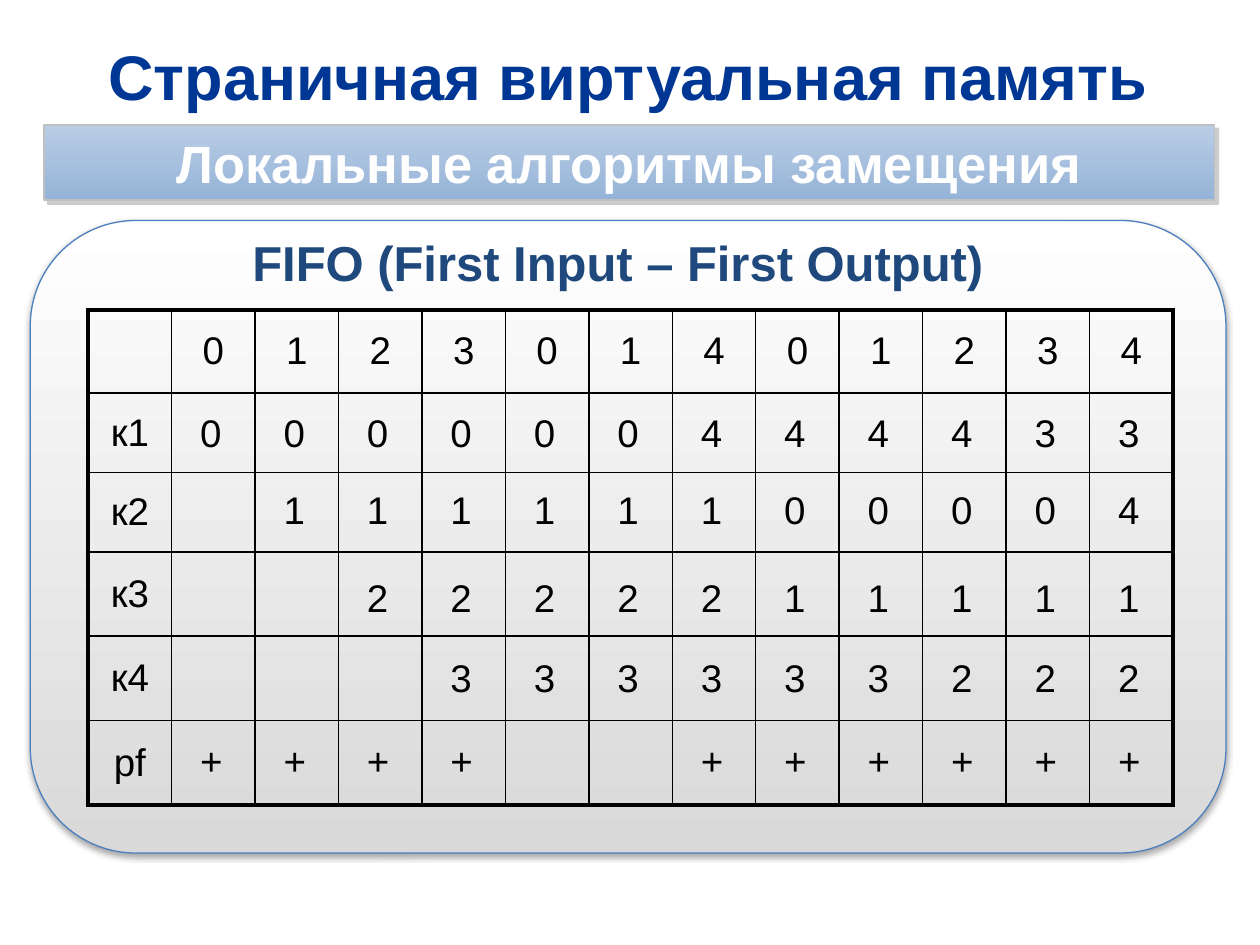
from lxml.etree import SubElement
from pptx import Presentation
from pptx.dml.color import RGBColor
from pptx.enum.shapes import MSO_SHAPE
from pptx.enum.text import MSO_ANCHOR, PP_ALIGN
from pptx.oxml import parse_xml
from pptx.oxml.ns import nsdecls, qn
from pptx.util import Inches, Pt

BLACK = RGBColor(0x00, 0x00, 0x00)
WHITE = RGBColor(0xFF, 0xFF, 0xFF)
TITLE_BLUE = RGBColor(0x00, 0x37, 0x94)
HEADING_BLUE = RGBColor(0x1F, 0x49, 0x7D)
BANNER_TOP = RGBColor(0xB9, 0xCD, 0xE5)
BANNER_BOTTOM = RGBColor(0x95, 0xB3, 0xD7)
BANNER_LINE = RGBColor(0xC0, 0xC0, 0xC0)
BANNER_SHADOW = RGBColor(0x80, 0x80, 0x80)
PANEL_BOTTOM = RGBColor(0xD9, 0xD9, 0xD9)
PANEL_LINE = RGBColor(0x4B, 0x7E, 0xBC)

COLUMN = 0.6623
ROW_HEIGHTS = [0.66, 0.63, 0.63, 0.67, 0.67, 0.67]
TABLE_LEFT, TABLE_TOP = 0.7, 2.46
REQUESTS = "012301401234"
ROW_LABELS = ["к1", "к2", "к3", "к4", "pf"]
FRAME_ROWS = [
    (3.2, "000000444433"),
    (3.81, " 11111100004"),
    (4.51, "  2222211111"),
    (5.14, "   333333222"),
    (5.8, "++++  ++++++"),
]


def write(frame, text, size, color, bold=False, align=PP_ALIGN.CENTER):
    frame.word_wrap = True
    para = frame.paragraphs[0]
    para.text = text
    para.alignment = align
    para.font.name = "Arial"
    para.font.size = Pt(size)
    para.font.bold = bold
    para.font.color.rgb = color


def add_panel(kind, left, top, width, height, colors, line, line_width, shadow):
    panel = page.shapes.add_shape(
        kind, Inches(left), Inches(top), Inches(width), Inches(height)
    )
    panel.fill.gradient()
    panel.fill.gradient_angle = 270
    for stop, color in zip(panel.fill.gradient_stops, colors):
        stop.color.rgb = color
    panel.line.color.rgb = line
    panel.line.width = Pt(line_width)
    panel.shadow.inherit = False
    color, opacity, blur, distance, angle = shadow
    effects = panel._element.spPr.find(qn("a:effectLst"))
    outer = SubElement(
        effects, qn("a:outerShdw"), blurRad=str(Pt(blur)), dist=str(Pt(distance)),
        dir=str(angle * 60000), algn="ctr", rotWithShape="0",
    )
    tint = SubElement(outer, qn("a:srgbClr"), val=str(color))
    SubElement(tint, qn("a:alpha"), val=str(opacity * 1000))
    return panel


deck = Presentation()
deck.slide_width, deck.slide_height = Inches(10), Inches(7.5)
page = deck.slides.add_slide(deck.slide_layouts[6])

add_panel(
    MSO_SHAPE.ROUNDED_RECTANGLE, 0.24, 1.75, 9.49, 5.02,
    (WHITE, PANEL_BOTTOM), PANEL_LINE, 0.75, (BLACK, 35, 3.1, 1.8, 90),
)

title = page.shapes.add_textbox(Inches(0.24), Inches(0.26), Inches(9.49), Inches(0.68))
title.text_frame.vertical_anchor = MSO_ANCHOR.MIDDLE
write(title.text_frame, "Страничная виртуальная память", 36, TITLE_BLUE, True)

banner = add_panel(
    MSO_SHAPE.RECTANGLE, 0.35, 0.99, 9.29, 0.6,
    (BANNER_TOP, BANNER_BOTTOM), BANNER_LINE, 1, (BANNER_SHADOW, 40, 0, 3, 45),
)
banner.text_frame.margin_left = banner.text_frame.margin_right = Inches(0.24)
banner.text_frame.margin_top = banner.text_frame.margin_bottom = Inches(0.04)
banner.text_frame.vertical_anchor = MSO_ANCHOR.MIDDLE
write(banner.text_frame, "Локальные алгоритмы замещения", 30, WHITE, True)

heading = page.shapes.add_textbox(Inches(0.59), Inches(1.8), Inches(8.85), Inches(0.57))
heading.text_frame.margin_right = Inches(0.32)
write(heading.text_frame, "FIFO (First Input – First Output)", 28, HEADING_BLUE, True)

row_count, column_count = len(ROW_HEIGHTS), len(REQUESTS) + 1
table = page.shapes.add_table(
    row_count, column_count, Inches(TABLE_LEFT), Inches(TABLE_TOP),
    Inches(COLUMN * column_count), Inches(sum(ROW_HEIGHTS)),
).table
table.first_row = table.horz_banding = False
for column in table.columns:
    column.width = Inches(COLUMN)
for row, height in zip(table.rows, ROW_HEIGHTS):
    row.height = Inches(height)

for row in range(row_count):
    for column in range(column_count):
        cell = table.cell(row, column)
        cell.fill.background()
        cell.vertical_anchor = MSO_ANCHOR.MIDDLE
        outer_edges = {
            "lnL": column == 0,
            "lnR": column == column_count - 1,
            "lnT": row == 0,
            "lnB": row == row_count - 1,
        }
        for index, (edge, is_outer) in enumerate(outer_edges.items()):
            width = Pt(2.25 if is_outer else 1)
            cell._tc.tcPr.insert(index, parse_xml(
                f'<a:{edge} {nsdecls("a")} w="{width}"><a:solidFill>'
                f'<a:srgbClr val="{BLACK}"/></a:solidFill></a:{edge}>'
            ))

for column, request in enumerate(REQUESTS, 1):
    write(table.cell(0, column).text_frame, request, 22, BLACK)
for row, label in enumerate(ROW_LABELS, 1):
    write(table.cell(row, 0).text_frame, label, 22, BLACK)

for top, marks in FRAME_ROWS:
    for column, mark in enumerate(marks):
        if mark != " ":
            box = page.shapes.add_textbox(
                Inches(1.49 + COLUMN * column), Inches(top), Inches(0.4), Inches(0.47)
            )
            write(box.text_frame, mark, 22, BLACK, align=PP_ALIGN.LEFT)

deck.save("out.pptx")
